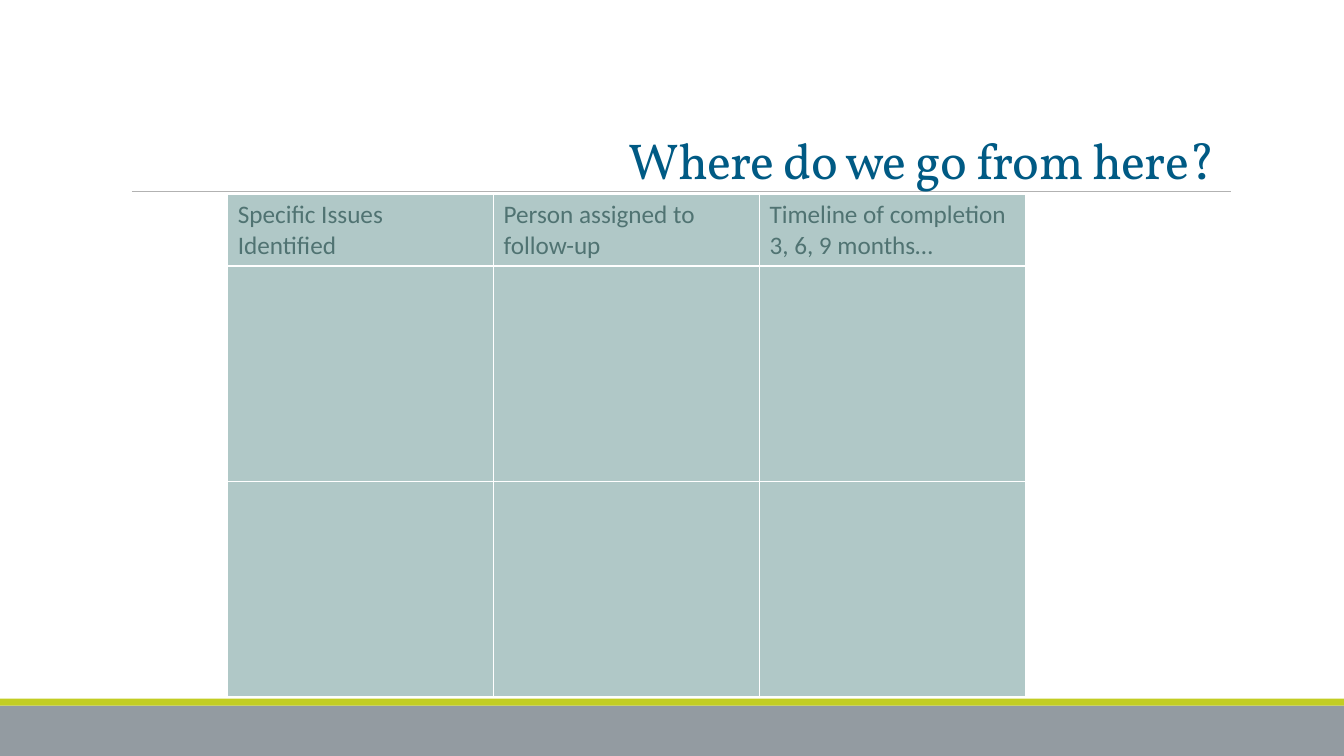
from lxml.etree import SubElement
from pptx import Presentation
from pptx.dml.color import RGBColor
from pptx.enum.shapes import MSO_CONNECTOR as Connector, MSO_SHAPE as Shape
from pptx.enum.text import MSO_ANCHOR as Anchor
from pptx.oxml.ns import qn
from pptx.util import Pt

# Content
TITLE = "Where do we go from here?"
HEADINGS = [
    ["Specific Issues Identified"],
    ["Person assigned to follow-up"],
    ["Timeline of completion", "3, 6, 9 months…"],
]
ISSUE_ROWS = 2

# Layout in points, and colours
WIDTH, HEIGHT = 960, 540
FOOTER_HEIGHT, STRIPE_HEIGHT = 36, 5
TABLE_LEFT, TABLE_TOP = 162.7, 139.2
COLUMN_WIDTH, HEADING_HEIGHT, ISSUE_HEIGHT = 189.9, 50.8, 153.7
GREY, LIME, BLUE = "939BA1", "C2CD23", "005A84"
RULE, TEAL, DARK_TEAL, WHITE = "B2B2B2", "B0C8C7", "507372", "FFFFFF"


def color(hex_value):
    return RGBColor.from_string(hex_value)


def write(frame, lines, font="Calibri", size=18, ink=DARK_TEAL,
          line_spacing=None, tracking=None):
    for index, line in enumerate(lines):
        paragraph = frame.add_paragraph() if index else frame.paragraphs[0]
        paragraph.line_spacing = line_spacing
        run = paragraph.add_run()
        run.text = line
        run.font.name, run.font.size = font, Pt(size)
        run.font.color.rgb = color(ink)
        if tracking is not None:
            run.font._element.set("spc", str(int(tracking * 100)))


def add_band(top, height, fill):
    band = slide.shapes.add_shape(Shape.RECTANGLE, 0, Pt(top), Pt(WIDTH), Pt(height))
    band.shadow.inherit = False
    band.fill.solid()
    band.fill.fore_color.rgb = color(fill)
    band.line.fill.background()


def style_cell(cell):
    properties = cell._tc.get_or_add_tcPr()
    for side in ("lnL", "lnR", "lnT", "lnB"):
        border = SubElement(properties, qn(f"a:{side}"), w=str(Pt(1)))
        fill = SubElement(border, qn("a:solidFill"))
        SubElement(fill, qn("a:srgbClr"), val=WHITE)
    cell.fill.solid()
    cell.fill.fore_color.rgb = color(TEAL)


presentation = Presentation()
presentation.slide_width, presentation.slide_height = Pt(WIDTH), Pt(HEIGHT)
slide = presentation.slides.add_slide(presentation.slide_layouts[6])

# Footer bands
footer_top = HEIGHT - FOOTER_HEIGHT
add_band(footer_top, FOOTER_HEIGHT, GREY)
add_band(footer_top - STRIPE_HEIGHT, STRIPE_HEIGHT, LIME)

# Rule under the title
rule = slide.shapes.add_connector(Connector.STRAIGHT, Pt(94.3), Pt(136.5),
                                  Pt(879), Pt(136.5))
rule.line.color.rgb = color(RULE)
rule.line.width = Pt(0.75)
SubElement(rule._element.spPr, qn("a:effectLst"))

# Title
title = slide.shapes.add_textbox(Pt(442), Pt(101.5), Pt(483), Pt(37.5)).text_frame
title.word_wrap = True
title.vertical_anchor = Anchor.BOTTOM
write(title, [TITLE], font="Vollkorn", size=36, ink=BLUE,
      line_spacing=0.85, tracking=-0.5)

# Follow-up table
row_heights = [HEADING_HEIGHT] + [ISSUE_HEIGHT] * ISSUE_ROWS
table = slide.shapes.add_table(
    len(row_heights), len(HEADINGS), Pt(TABLE_LEFT), Pt(TABLE_TOP),
    Pt(COLUMN_WIDTH * len(HEADINGS)), Pt(sum(row_heights))).table
table.first_row = table.horz_banding = False
for row, height in zip(table.rows, row_heights):
    row.height = Pt(height)
for column in table.columns:
    column.width = Pt(COLUMN_WIDTH)
for cell in table.iter_cells():
    style_cell(cell)
for index, heading in enumerate(HEADINGS):
    write(table.cell(0, index).text_frame, heading)

presentation.save("out.pptx")
